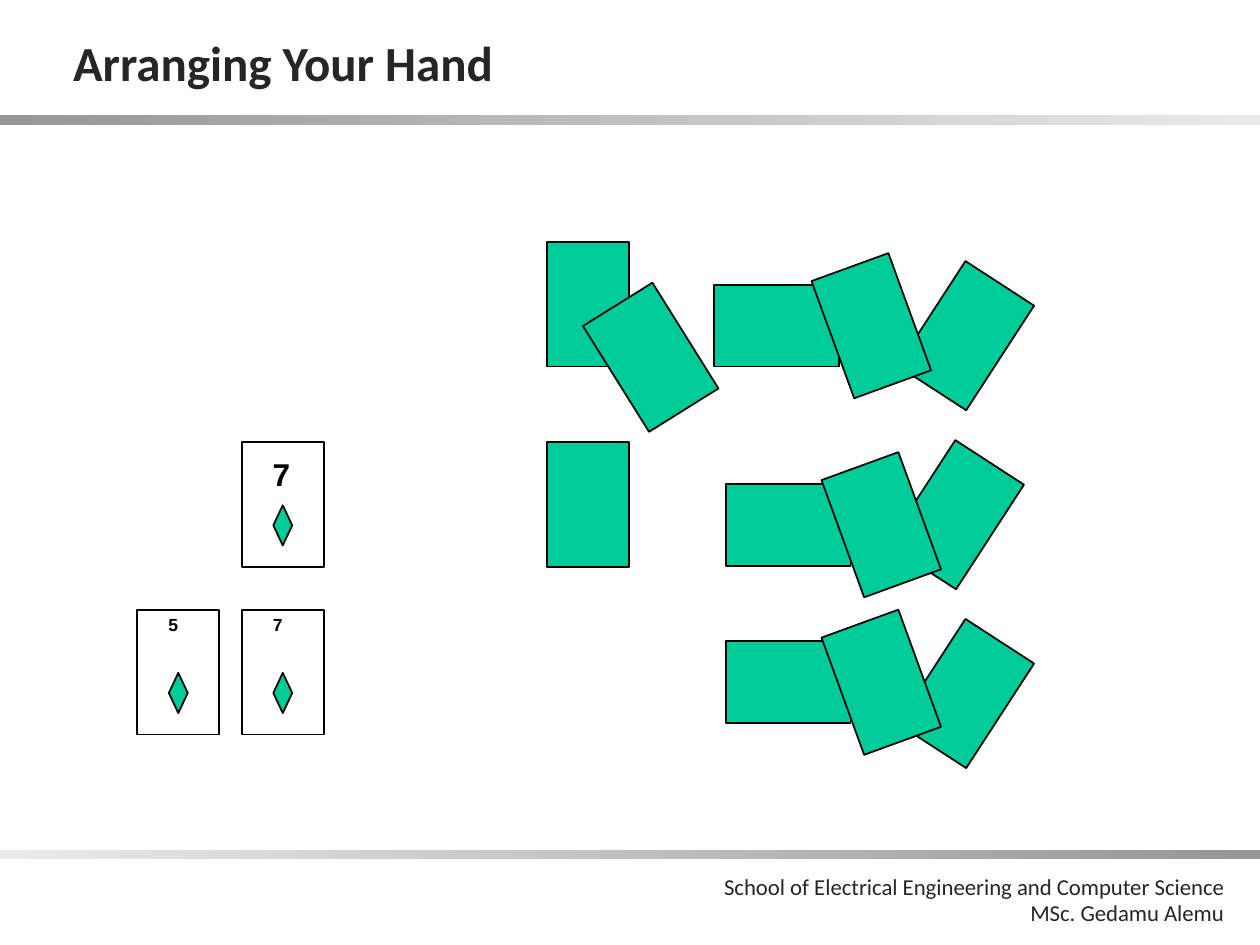
from typing import NamedTuple, Optional

from pptx import Presentation
from pptx.dml.color import RGBColor
from pptx.enum.shapes import MSO_SHAPE as Preset
from pptx.enum.text import MSO_ANCHOR as Anchor, MSO_AUTO_SIZE as AutoSize, PP_ALIGN as Align
from pptx.util import Pt

GREEN, BLACK, INK = "00CC99", "000000", "262626"
DARK_GREY, LIGHT_GREY = "969696", "EAEAEA"
CARD_WIDTH, CARD_HEIGHT = 46.8, 71.3
FAN_TILT, MIDDLE_TILT = 33, -20


class Spot(NamedTuple):
    left: float
    top: float


class Fan(NamedTuple):
    flat: Spot
    right: Spot
    middle: Spot


class FaceCard(NamedTuple):
    spot: Spot
    rank: str
    size: float
    label_top: float
    label_width: float
    label_height: float


FANS = [
    Fan(Spot(408.2, 162.7), Spot(528.5, 156.2), Spot(474.5, 150.5)),
    Fan(Spot(414.7, 276.5), Spot(522.7, 258.5), Spot(480.2, 264.2)),
    Fan(Spot(414.7, 366.5), Spot(528.5, 360.7), Spot(480.2, 354.2)),
]
FACE_CARDS = [
    FaceCard(Spot(138.2, 252.7), "7", 18, 3.6, 24.5, 28.8),
    FaceCard(Spot(78.5, 348.5), "5", 10, -1.4, 20.2, 19.4),
    FaceCard(Spot(138.2, 348.5), "7", 10, -1.4, 20.2, 19.4),
]


def color(value: str) -> RGBColor:
    return RGBColor.from_string(value)


def add_outlined(page, preset, spot: Spot, width: float, height: float,
                 fill: Optional[str] = GREEN, rotation: float = 0):
    shape = page.shapes.add_shape(preset, Pt(spot.left), Pt(spot.top), Pt(width), Pt(height))
    shape.shadow.inherit = False
    shape.rotation = rotation
    if fill:
        shape.fill.solid()
        shape.fill.fore_color.rgb = color(fill)
    else:
        shape.fill.background()
    shape.line.color.rgb = color(BLACK)
    shape.line.width = Pt(1)


def add_card(page, spot: Spot, fill: Optional[str] = GREEN, rotation: float = 0):
    add_outlined(page, Preset.RECTANGLE, spot, CARD_WIDTH, CARD_HEIGHT, fill, rotation)


def add_bar(page, top: float, rotation: float = 0):
    bar = page.shapes.add_shape(Preset.RECTANGLE, 0, Pt(top), Pt(720), Pt(5.6))
    bar.shadow.inherit = False
    bar.line.fill.background()
    bar.fill.gradient()
    bar.fill.gradient_angle = 0
    for stop, shade in zip(bar.fill.gradient_stops, (DARK_GREY, LIGHT_GREY)):
        stop.color.rgb = color(shade)
    bar.rotation = rotation


def write(box, text: str, *, size: float, font: str, ink: str, bold: bool = False,
          align=Align.LEFT, spacing: Optional[float] = None, before: float = 0):
    frame = box.text_frame
    for index, line in enumerate(text.split("\n")):
        para = frame.add_paragraph() if index else frame.paragraphs[0]
        para.alignment = align
        if spacing:
            para.line_spacing = Pt(spacing)
        para.space_before = Pt(before if index else 0)
        span = para.add_run()
        span.text = line
        span.font.size = Pt(size)
        span.font.name = font
        span.font.bold = bold
        span.font.color.rgb = color(ink)


def add_fan(page, fan: Fan):
    add_outlined(page, Preset.RECTANGLE, fan.flat, CARD_HEIGHT, CARD_WIDTH)
    add_card(page, fan.right, rotation=FAN_TILT)
    add_card(page, fan.middle, rotation=MIDDLE_TILT)


def add_face_card(page, card: FaceCard):
    left, top = card.spot
    add_card(page, card.spot, fill=None)
    label = page.shapes.add_textbox(Pt(left + 10.6), Pt(top + card.label_top),
                                    Pt(card.label_width), Pt(card.label_height))
    label.text_frame.word_wrap = False
    label.text_frame.auto_size = AutoSize.SHAPE_TO_FIT_TEXT
    write(label, card.rank, size=card.size, font="Arial", ink=BLACK, bold=True)
    add_outlined(page, Preset.DIAMOND, Spot(left + 18, top + 36), 10.8, 23)


def add_title(page, text: str):
    title = page.shapes.title
    title.left, title.top, title.width, title.height = Pt(33.8), Pt(15.1), Pt(643.7), Pt(41)
    frame = title.text_frame
    frame.vertical_anchor = Anchor.MIDDLE
    frame.auto_size = AutoSize.NONE
    frame.margin_left = frame.margin_right = Pt(8)
    frame.margin_top = frame.margin_bottom = Pt(4)
    write(title, text, size=28, font="Calibri", ink=INK, bold=True)


def add_footer(page, text: str):
    footer = page.shapes.add_textbox(Pt(371.5), Pt(499), Pt(334.8), Pt(35.3))
    footer.text_frame.word_wrap = True
    footer.text_frame.auto_size = AutoSize.SHAPE_TO_FIT_TEXT
    write(footer, text, size=13, font="Calibri", ink=INK,
          align=Align.RIGHT, spacing=12, before=2.6)


def main():
    deck = Presentation()
    deck.slide_width, deck.slide_height = Pt(720), Pt(540)
    page = deck.slides.add_slide(deck.slide_layouts[5])
    add_bar(page, 65.6)
    add_footer(page, "School of Electrical Engineering and Computer Science\nMSc. Gedamu Alemu")
    add_bar(page, 485.5, rotation=180)
    add_title(page, "Arranging Your Hand")
    add_card(page, Spot(312.5, 138.2))
    add_card(page, Spot(348.5, 168.5), rotation=-32)
    add_card(page, Spot(312.5, 252.7))
    for fan in FANS:
        add_fan(page, fan)
    for card in FACE_CARDS:
        add_face_card(page, card)
    deck.save("out.pptx")


if __name__ == "__main__":
    main()
